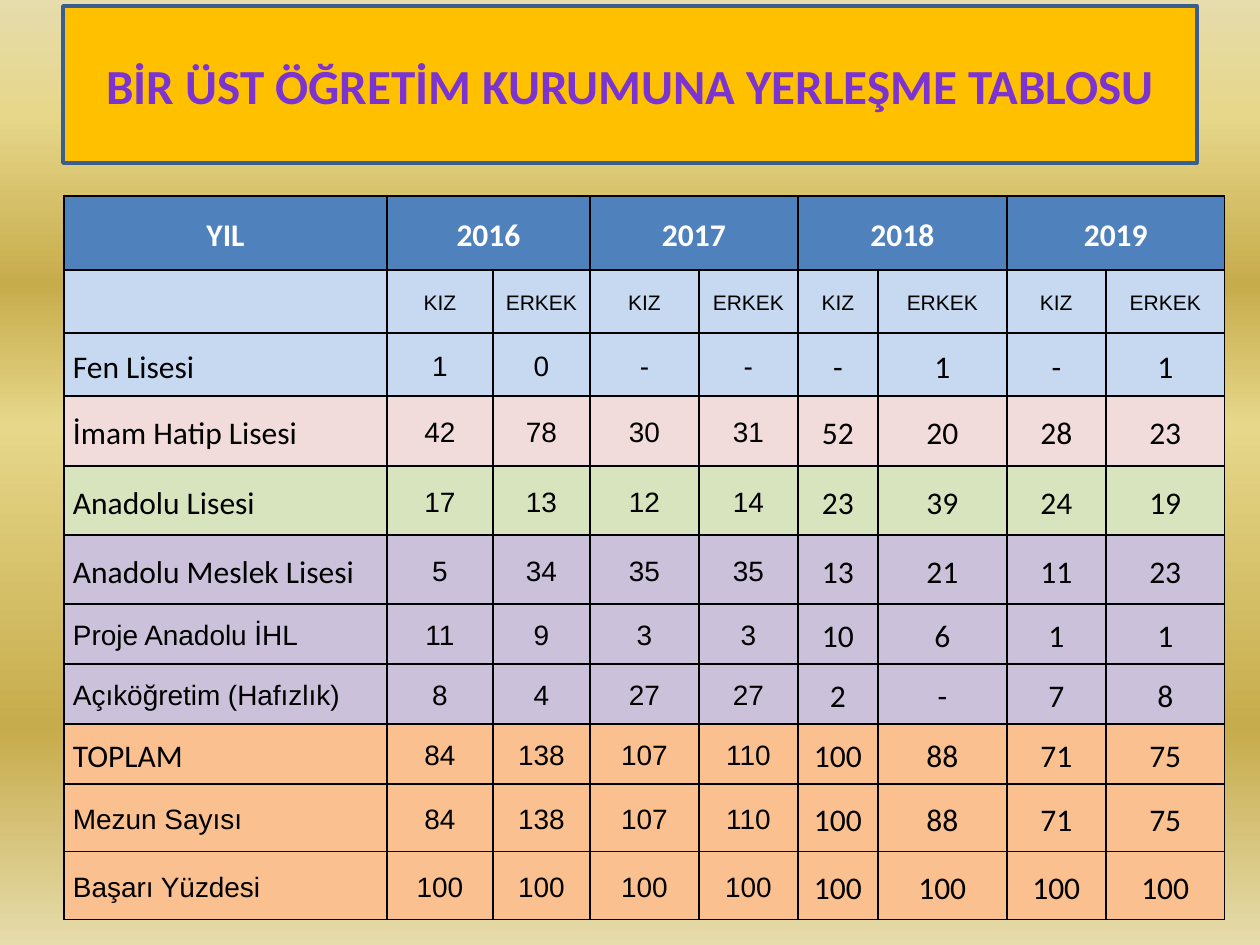
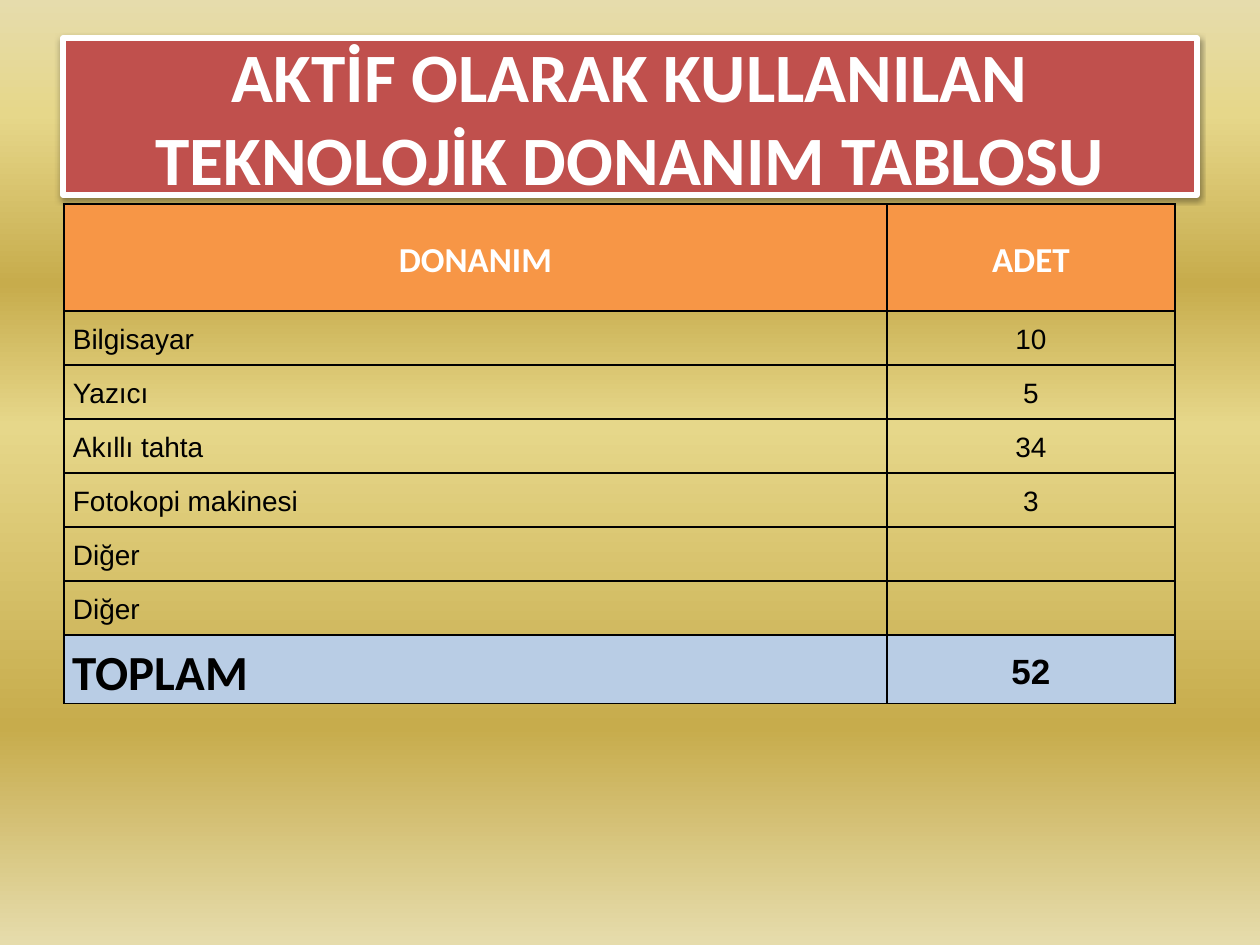
from lxml.etree import SubElement
from pptx import Presentation
from pptx.dml.color import RGBColor
from pptx.enum.shapes import MSO_SHAPE
from pptx.enum.text import MSO_ANCHOR, PP_ALIGN
from pptx.oxml import parse_xml
from pptx.oxml.ns import nsdecls, qn
from pptx.util import Emu, Pt

PX = 914400 / 126
BLACK, WHITE = "000000", "FFFFFF"
BACKDROP = [(0, "E6DCAC"), (12, "E6D78A"), (30, "C7AC4C"),
            (45, "E6D78A"), (77, "C7AC4C"), (100, "E6DCAC")]
NO_STYLE = "{2D5ABB26-0587-4C30-8999-92F81FD0307C}"
CALIBRI = {"font": "Calibri", "size": 18}
ARIAL = {"font": "Arial", "size": 16}
SMALL = {"font": "Arial", "size": 12}

YEARS = ["2016", "2017", "2018", "2019"]
BLUE, PINK, GREEN, PURPLE, ORANGE = "C6D9F1", "F2DCDB", "D7E4BD", "CCC1DA", "FAC090"
SCHOOLS = [
    ("Fen Lisesi", "1 0 - - - 1 - 1", BLUE, CALIBRI, 63),
    ("İmam Hatip Lisesi", "42 78 30 31 52 20 28 23", PINK, CALIBRI, 70),
    ("Anadolu Lisesi", "17 13 12 14 23 39 24 19", GREEN, CALIBRI, 69),
    ("Anadolu Meslek Lisesi", "5 34 35 35 13 21 11 23", PURPLE, CALIBRI, 69),
    ("Proje Anadolu İHL", "11 9 3 3 10 6 1 1", PURPLE, ARIAL, 60),
    ("Açıköğretim (Hafızlık)", "8 4 27 27 2 - 7 8", PURPLE, ARIAL, 60),
    ("TOPLAM", "84 138 107 110 100 88 71 75", ORANGE, CALIBRI, 60),
    ("Mezun Sayısı", "84 138 107 110 100 88 71 75", ORANGE, ARIAL, 68),
    ("Başarı Yüzdesi", "100 100 100 100 100 100 100 100", ORANGE, ARIAL, 68),
]
EQUIPMENT = [("Bilgisayar", "10"), ("Yazıcı", "5"), ("Akıllı tahta", "34"),
             ("Fotokopi makinesi", "3"), ("Diğer", ""), ("Diğer", "")]


def px(n):
    """Turn pixels into EMU."""
    return Emu(round(n * PX))


def rgb(color):
    """Turn a hex string into a colour."""
    return RGBColor.from_string(color)


def write(tf, text, font="Calibri", size=18, color=BLACK, bold=False,
          align=PP_ALIGN.CENTER, spacing=None):
    """Put one formatted paragraph into a text frame."""
    p = tf.paragraphs[0]
    p.alignment = align
    p.line_spacing = spacing
    r = p.add_run()
    r.text = text
    r.font.name, r.font.size, r.font.bold = font, Pt(size), bold
    r.font.color.rgb = rgb(color)


def add_slide(prs):
    """Add a blank slide with the golden gradient."""
    s = prs.slides.add_slide(prs.slide_layouts[6])
    fill = s.background.fill
    fill.gradient()
    fill.gradient_angle = 270
    stops = s.element.find(".//" + qn("a:gsLst"))
    for stop in list(stops):
        stops.remove(stop)
    for position, color in BACKDROP:
        stop = SubElement(stops, qn("a:gs"), pos=str(position * 1000))
        SubElement(stop, qn("a:srgbClr"), val=color)
    return s


def add_title(s, text, top, fill, line, width, **fmt):
    """Add the framed title band."""
    sp = s.shapes.add_shape(MSO_SHAPE.RECTANGLE, px(63), px(top), px(1134), px(157))
    sp.shadow.inherit = False
    sp.fill.solid()
    sp.fill.fore_color.rgb = rgb(fill)
    sp.line.color.rgb = rgb(line)
    sp.line.width = Pt(width)
    tf = sp.text_frame
    tf.word_wrap = True
    tf.vertical_anchor = MSO_ANCHOR.MIDDLE
    write(tf, text, bold=True, **fmt)
    return sp


def add_shadow(sp):
    """Give a shape a soft shadow below it."""
    effects = sp.element.spPr.find(qn("a:effectLst"))
    effects.append(parse_xml(
        f'<a:outerShdw {nsdecls("a")} blurRad="40000" dist="20000" dir="5400000" '
        'rotWithShape="0"><a:srgbClr val="000000"><a:alpha val="38000"/>'
        '</a:srgbClr></a:outerShdw>'))


def add_grid(s, top, widths, heights):
    """Add an unstyled table with the given column widths and row heights."""
    frame = s.shapes.add_table(len(heights), len(widths), px(64), px(top),
                               px(sum(widths)), px(sum(heights)))
    table = frame.table
    table.first_row = table.horz_banding = False
    frame.element.find(".//" + qn("a:tableStyleId")).text = NO_STYLE
    for column, width in zip(table.columns, widths):
        column.width = px(width)
    for row, height in zip(table.rows, heights):
        row.height = px(height)
    return table


def fill_cell(cell, text, fill=None, **fmt):
    """Set the fill, borders, margins and text of a cell."""
    cell.margin_left = cell.margin_right = px(9)
    cell.margin_top = cell.margin_bottom = 0
    cell.vertical_anchor = MSO_ANCHOR.MIDDLE
    if fill:
        cell.fill.solid()
        cell.fill.fore_color.rgb = rgb(fill)
    else:
        cell.fill.background()
    for i, side in enumerate(("lnL", "lnR", "lnT", "lnB")):
        cell._tc.get_or_add_tcPr().insert(i, parse_xml(
            f'<a:{side} {nsdecls("a")} w="12700"><a:solidFill>'
            f'<a:srgbClr val="{BLACK}"/></a:solidFill></a:{side}>'))
    if text:
        write(cell.text_frame, text, spacing=1.15, **fmt)


def add_placement_slide(prs):
    """Add the table of school placements by year."""
    s = add_slide(prs)
    add_title(s, "BİR ÜST ÖĞRETİM KURUMUNA YERLEŞME TABLOSU", 6, "FFC000",
              "3A5F8C", 2, size=28, color="7B34D2")
    table = add_grid(s, 196, [323, 106, 97, 109, 99, 80, 129, 99, 119],
                     [74, 63] + [school[-1] for school in SCHOOLS])
    header = ["YIL"] + [text for year in YEARS for text in (year, "")]
    for c, text in enumerate(header):
        fill_cell(table.cell(0, c), text, "4F81BD", color=WHITE, bold=True)
    for c in range(1, len(header), 2):
        table.cell(0, c).merge(table.cell(0, c + 1))
    for c, text in enumerate([""] + ["KIZ", "ERKEK"] * len(YEARS)):
        fill_cell(table.cell(1, c), text, BLUE, **SMALL)
    for r, (name, counts, fill, style, _) in enumerate(SCHOOLS, 2):
        fill_cell(table.cell(r, 0), name, fill, align=PP_ALIGN.LEFT, **style)
        for c, count in enumerate(counts.split(), 1):
            fill_cell(table.cell(r, c), count, fill, **(ARIAL if c < 5 else CALIBRI))


def add_equipment_slide(prs):
    """Add the table of technical equipment."""
    s = add_slide(prs)
    sp = add_title(s, "AKTİF OLARAK KULLANILAN TEKNOLOJİK DONANIM TABLOSU", 38,
                   "C0504D", WHITE, 3, size=39.6, color=WHITE)
    add_shadow(sp)
    table = add_grid(s, 204, [823, 288], [107] + [54] * len(EQUIPMENT) + [67])
    for c, text in enumerate(("DONANIM", "ADET")):
        fill_cell(table.cell(0, c), text, "F79646", size=20, color=WHITE, bold=True)
    for r, (name, count) in enumerate(EQUIPMENT, 1):
        fill_cell(table.cell(r, 0), name, align=PP_ALIGN.LEFT, **ARIAL)
        fill_cell(table.cell(r, 1), count, **ARIAL)
    last = len(EQUIPMENT) + 1
    fill_cell(table.cell(last, 0), "TOPLAM", "B9CDE5", size=28, bold=True,
              align=PP_ALIGN.LEFT)
    fill_cell(table.cell(last, 1), "52", "B9CDE5", font="Arial", size=20, bold=True)


def main():
    """Build both slides and save them."""
    prs = Presentation()
    prs.slide_width, prs.slide_height = px(1260), px(945)
    add_placement_slide(prs)
    add_equipment_slide(prs)
    prs.save("out.pptx")


if __name__ == "__main__":
    main()
